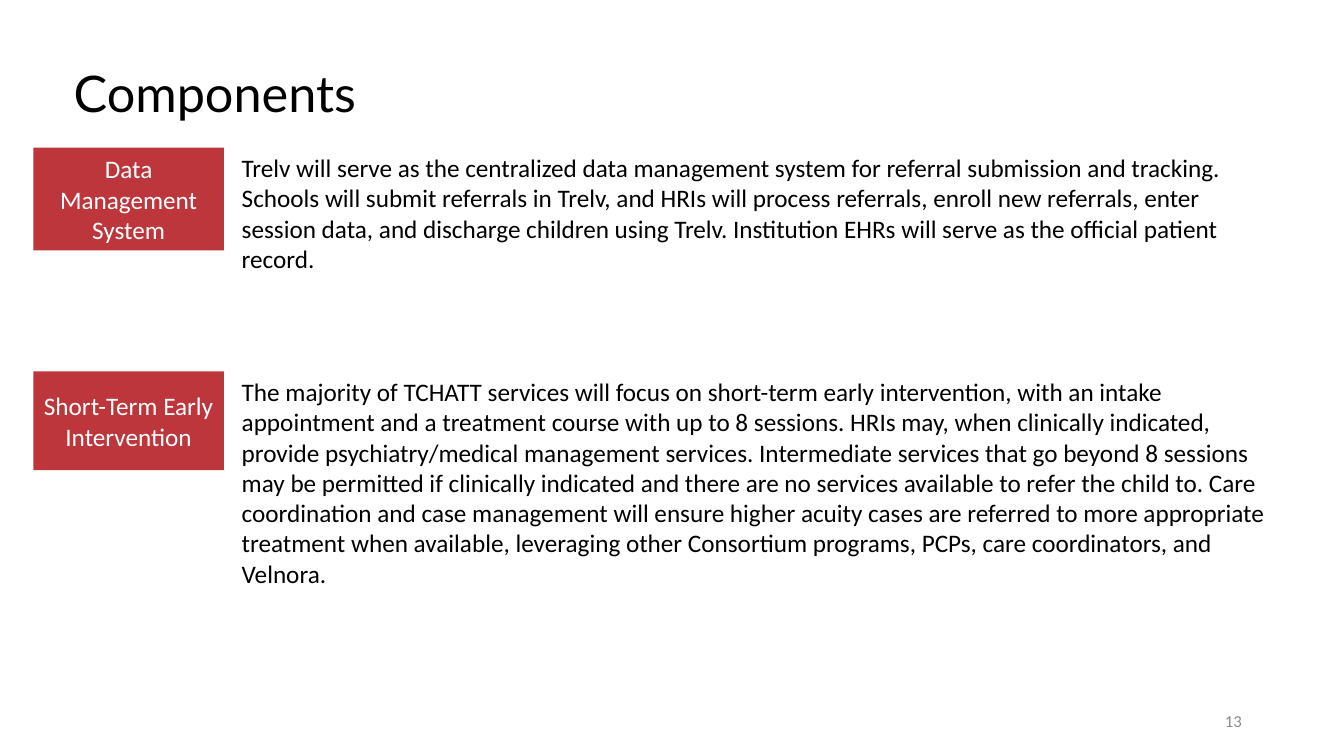
import pptx
import pptx.util
import pptx.dml.color
import pptx.enum.shapes
import pptx.enum.text

Pt = pptx.util.Pt
ALIGN = pptx.enum.text.PP_ALIGN
ANCHOR = pptx.enum.text.MSO_ANCHOR
COLORS = {"text": "000000", "label": "BD363C", "label_text": "FFFFFF", "number": "8C8C8C"}

LABEL_W = 136.1
TEXT_X = 141.8  # body text offset from the left edge of a row

# (left, top, width, text height), label height, label, description
COMPONENTS = [
    ((23.8, 105.4, 888.4, 94.3), 73.4, "Data Management System",
     "Trelv will serve as the centralized data management system for referral "
     "submission and tracking. Schools will submit referrals in Trelv, and HRIs will "
     "process referrals, enroll new referrals, enter session data, and discharge "
     "children using Trelv. Institution EHRs will serve as the official patient record."),
    ((23.8, 265.3, 888.4, 159.8), 70.6, "Short-Term Early Intervention",
     "The majority of TCHATT services will focus on short-term early intervention, "
     "with an intake appointment and a treatment course with up to 8 sessions. HRIs "
     "may, when clinically indicated, provide psychiatry/medical management services. "
     "Intermediate services that go beyond 8 sessions may be permitted if clinically "
     "indicated and there are no services available to refer the child to. Care "
     "coordination and case management will ensure higher acuity cases are referred to "
     "more appropriate treatment when available, leveraging other Consortium programs, "
     "PCPs, care coordinators, and Velnora."),
]


def rgb(name):
    return pptx.dml.color.RGBColor.from_string(COLORS[name])


def write(sp, text, size, color, font="Calibri", align=ALIGN.LEFT, anchor=ANCHOR.TOP):
    tf = sp.text_frame
    tf.word_wrap = True
    tf.vertical_anchor = anchor
    p = tf.paragraphs[0]
    p.text = text
    p.alignment = align
    p.font.size = Pt(size)
    p.font.name = font
    p.font.color.rgb = rgb(color)
    return p


def add_title(slide, box, text):
    sp = slide.shapes.title
    sp.left, sp.top, sp.width, sp.height = map(Pt, box)
    p = write(sp, text, 40 - 4, "text", "Lato", anchor=ANCHOR.MIDDLE)
    p.line_spacing = 0.9


def add_component(slide, box, label_h, label, description):
    x, y, w, h = box
    # Description
    sp = slide.shapes.add_textbox(Pt(x + TEXT_X), Pt(y), Pt(w - TEXT_X), Pt(h))
    write(sp, description, 18, "text")
    # Red label
    sp = slide.shapes.add_shape(pptx.enum.shapes.MSO_SHAPE.RECTANGLE,
                                Pt(x), Pt(y), Pt(LABEL_W), Pt(label_h))
    sp.shadow.inherit = False
    sp.fill.solid()
    sp.fill.fore_color.rgb = rgb("label")
    sp.line.fill.background()
    write(sp, label, 18, "label_text", align=ALIGN.CENTER, anchor=ANCHOR.MIDDLE)


def add_slide_number(slide, box, number):
    sp = slide.shapes.add_textbox(*map(Pt, box))
    write(sp, number, 12, "number", align=ALIGN.RIGHT, anchor=ANCHOR.MIDDLE)


def main():
    prs = pptx.Presentation()
    prs.slide_width, prs.slide_height = Pt(960), Pt(540)
    slide = prs.slides.add_slide(prs.slide_layouts[5])
    add_title(slide, (45.4, 34.6, 869.8, 67.7), "Components")
    for component in COMPONENTS:
        add_component(slide, *component)
    add_slide_number(slide, (678.2, 500.4, 216, 28.8), "13")
    prs.save("out.pptx")


if __name__ == "__main__":
    main()
